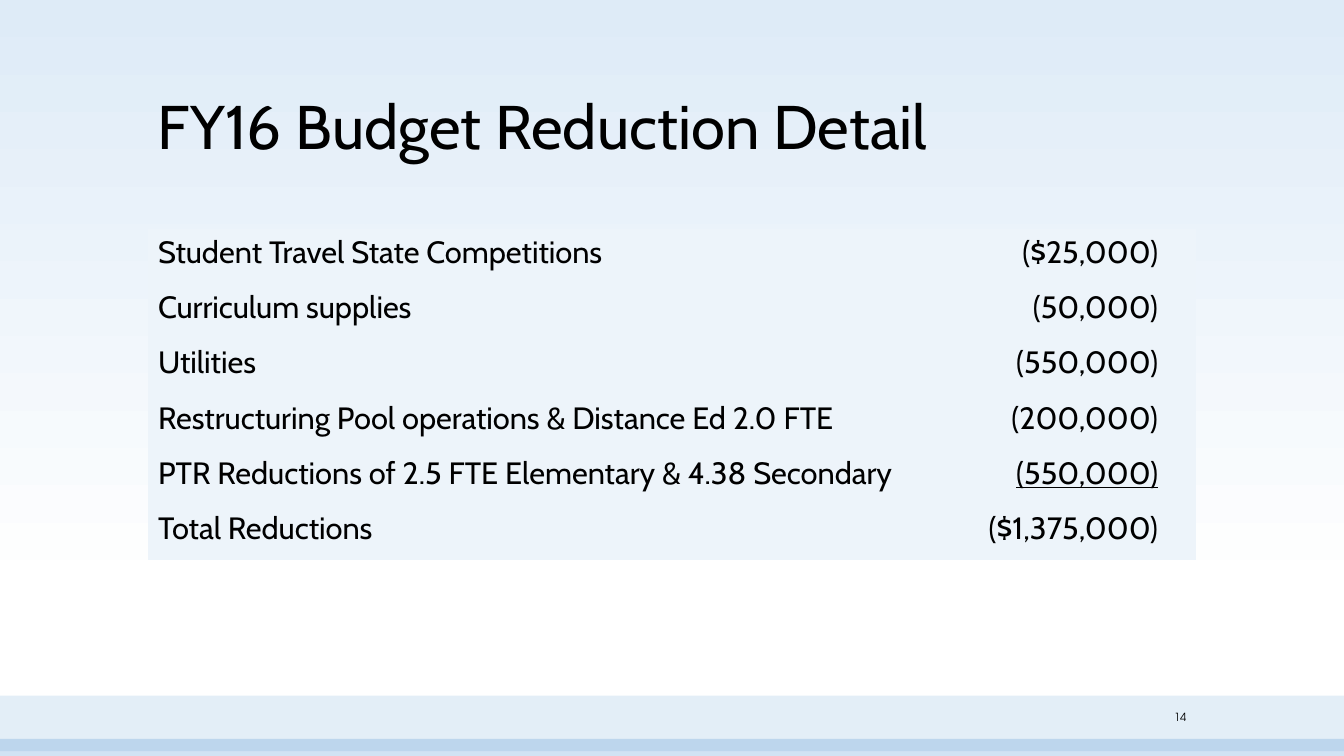
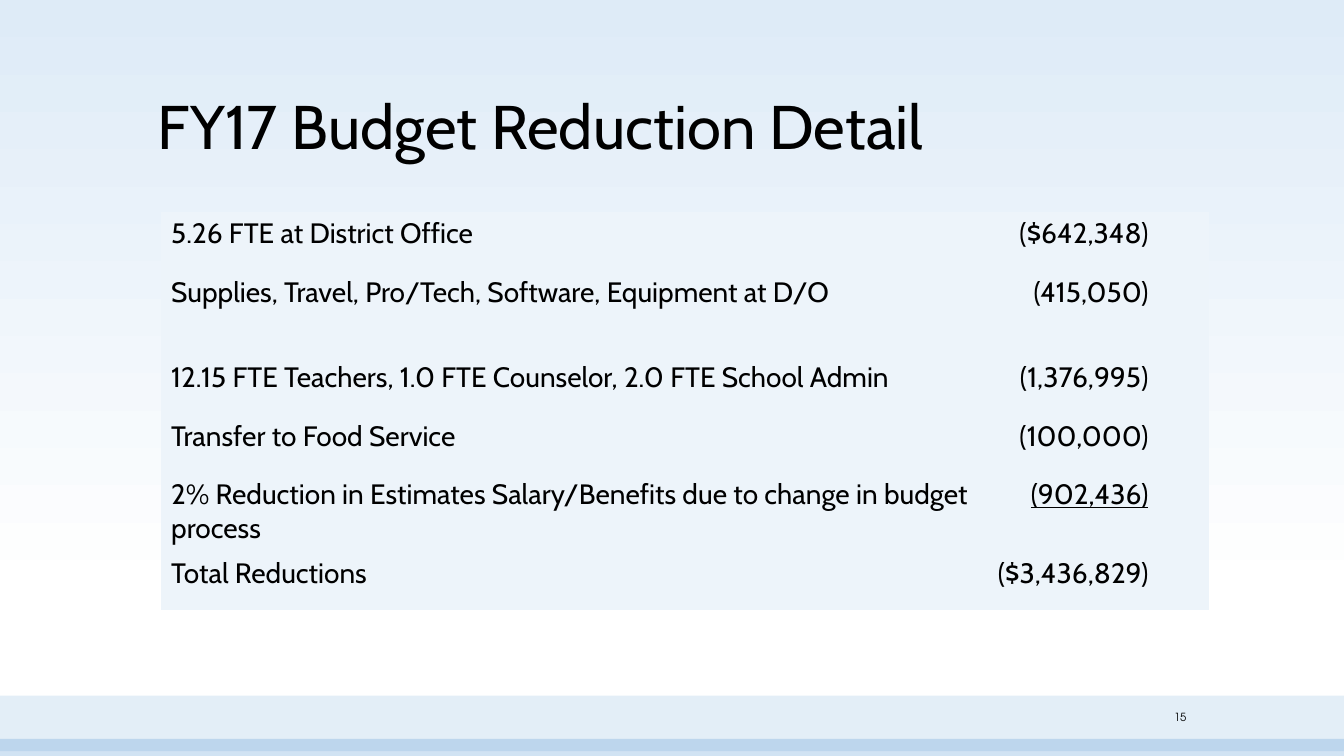
from lxml.etree import SubElement
from pptx import Presentation
from pptx.dml.color import RGBColor
from pptx.enum.shapes import MSO_SHAPE
from pptx.enum.text import MSO_ANCHOR, PP_ALIGN
from pptx.oxml.ns import qn
from pptx.util import Cm, Pt

SKY = RGBColor(0xDE, 0xEB, 0xF7)
WHITE = RGBColor(0xFF, 0xFF, 0xFF)
BLUE = RGBColor(0x5B, 0x9B, 0xD5)
PALE = RGBColor(0xED, 0xF4, 0xFA)
BLACK = RGBColor(0, 0, 0)
BODY_FONT = "Cabin"
NUMBER_FONT = "TeX Gyre Adventor"
PLAIN_TABLE = "{2D5ABB26-0587-4C30-8999-92F81FD0307C}"

WIDTH, HEIGHT = 33.87, 19.05
TITLE_BOX = (3.73, 1.22, 26.42, 3.02)
NUMBER_BOX = (28.37, 17.75, 1.78, 0.66)
BANDS = [((0, 17.53, WIDTH, 1.4), 17), ((0, 18.62, WIDTH, 0.43), 28)]

FY16 = [
    ("Student Travel State Competitions", "($25,000)"),
    ("Curriculum supplies", "(50,000)"),
    ("Utilities", "(550,000)"),
    ("Restructuring Pool operations & Distance Ed 2.0 FTE", "(200,000)"),
    ("PTR Reductions of 2.5 FTE Elementary & 4.38 Secondary", "(550,000)"),
    ("Total Reductions", "($1,375,000)"),
]
FY17 = [
    ("5.26 FTE at District Office", "($642,348)"),
    ("Supplies, Travel, Pro/Tech, Software, Equipment at D/O", "(415,050)"),
    ("12.15 FTE Teachers, 1.0 FTE Counselor, 2.0 FTE School Admin", "(1,376,995)"),
    ("Transfer to Food Service", "(100,000)"),
    ("2% Reduction in Estimates Salary/Benefits due to change in budget process",
     "(902,436)"),
    ("Total Reductions", "($3,436,829)"),
]


def lengths(box):
    """Turn a box in centimetres into lengths."""
    return [Cm(value) for value in box]


def write(frame, text, size, font=BODY_FONT, align=PP_ALIGN.LEFT,
          anchor=MSO_ANCHOR.TOP, spacing=None, underline=None, tab=None):
    """Put one formatted paragraph in a text frame."""
    frame.word_wrap = True
    frame.vertical_anchor = anchor
    paragraph = frame.paragraphs[0]
    paragraph.alignment = align
    if spacing:
        paragraph.line_spacing = spacing
    if tab:
        stops = SubElement(paragraph._p.get_or_add_pPr(), qn("a:tabLst"))
        SubElement(stops, qn("a:tab"), pos=str(Cm(tab)), algn="r")
    run = paragraph.add_run()
    run.text = text
    run.font.name = font
    run.font.size = Pt(size)
    run.font.color.rgb = BLACK
    run.font.underline = underline


def paint_background(slide):
    """Fade the slide from sky blue at the top to white."""
    fill = slide.background.fill
    fill.gradient()
    fill.gradient_angle = 270
    for stop, color, position in zip(fill.gradient_stops, (SKY, WHITE), (0, 0.79)):
        stop.color.rgb = color
        stop.position = position


def add_band(slide, box, opacity):
    """Draw one translucent footer band."""
    band = slide.shapes.add_shape(MSO_SHAPE.RECTANGLE, *lengths(box))
    band.shadow.inherit = False
    band.line.fill.background()
    band.fill.solid()
    band.fill.fore_color.rgb = BLUE
    tint = band.fill._xPr.find(".//" + qn("a:srgbClr"))
    SubElement(tint, qn("a:alpha"), val=str(opacity * 1000))


def add_reductions(slide, box, items, row_heights, label_width, size, tab):
    """Lay out reductions with amounts right-aligned and a rule above the total."""
    left, top, width = box
    table = slide.shapes.add_table(
        len(items), 2, *lengths((left, top, width, sum(row_heights)))).table
    table.first_row = table.horz_banding = False
    table._tbl.tblPr.find(qn("a:tableStyleId")).text = PLAIN_TABLE
    table.columns[0].width = Cm(label_width)
    table.columns[1].width = Cm(width - label_width)
    for index, (label, amount) in enumerate(items):
        row = table.rows[index]
        row.height = Cm(row_heights[index])
        for cell in row.cells:
            cell.fill.solid()
            cell.fill.fore_color.rgb = PALE
        last_item = index == len(items) - 2
        write(row.cells[0].text_frame, label, size)
        write(row.cells[1].text_frame, "\t" + amount, size,
              underline=last_item or None, tab=tab)


def add_detail_slide(deck, title, number, **reductions):
    """Add a slide with title, reductions, footer bands and number."""
    slide = deck.slides.add_slide(deck.slide_layouts[6])
    paint_background(slide)
    for box, opacity in BANDS:
        add_band(slide, box, opacity)
    heading = slide.shapes.add_textbox(*lengths(TITLE_BOX))
    write(heading.text_frame, title, 44, anchor=MSO_ANCHOR.BOTTOM, spacing=0.9)
    add_reductions(slide, **reductions)
    page = slide.shapes.add_textbox(*lengths(NUMBER_BOX))
    write(page.text_frame, str(number), 8, font=NUMBER_FONT,
          align=PP_ALIGN.RIGHT, anchor=MSO_ANCHOR.MIDDLE)


def main():
    """Build and save the deck."""
    deck = Presentation()
    deck.slide_width, deck.slide_height = Cm(WIDTH), Cm(HEIGHT)
    add_detail_slide(deck, "FY16 Budget Reduction Detail", 14,
                     box=(3.73, 5.77, 26.42), items=FY16, row_heights=[1.39] * 6,
                     label_width=20.75, size=22, tab=4.45)
    add_detail_slide(deck, "FY17 Budget Reduction Detail", 15,
                     box=(4.06, 5.33, 26.42), items=FY17,
                     row_heights=[1.48, 2.14, 1.48, 1.48, 1.98, 1.48],
                     label_width=20.73, size=20, tab=3.9)
    deck.save("out.pptx")


if __name__ == "__main__":
    main()
